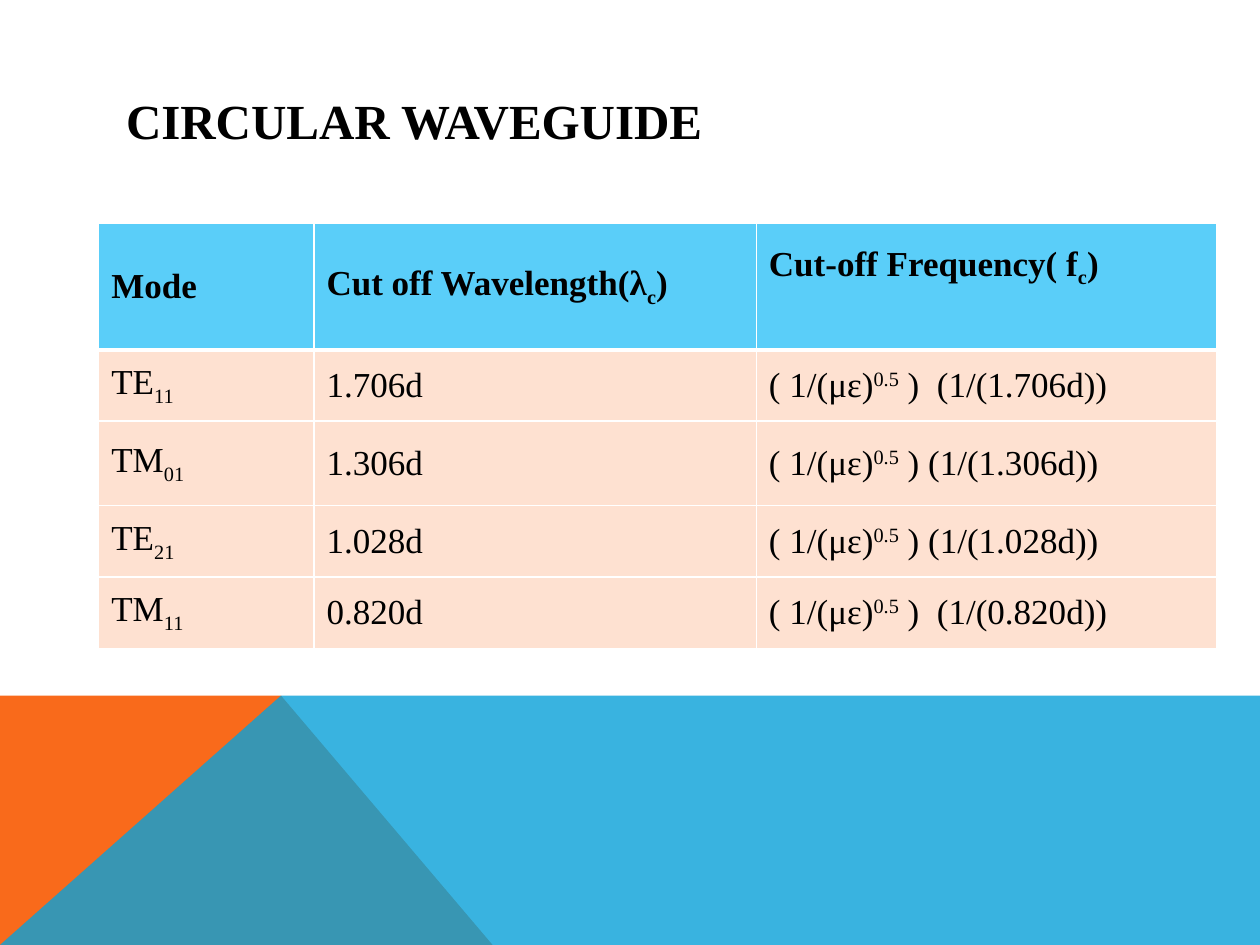
from lxml import etree
from pptx import Presentation
from pptx.dml.color import RGBColor
from pptx.enum.text import MSO_ANCHOR, PP_ALIGN
from pptx.oxml.ns import qn
from pptx.util import Pt

MIDDLE, LEFT = MSO_ANCHOR.MIDDLE, PP_ALIGN.LEFT
FONT = "Times New Roman"
TITLE_ONLY = 5
W, H = 720, 540
BAND_TOP, PEAK_X, FOOT_X = 397.5, 160.6, 281.5
SUB, SUP = -25, 30
COLORS = {"text": "000000", "orange": "F96A1B", "blue": "08A1D9",
          "head": "5ACEF9", "body": "FEE1D1", "border": "FFFFFF"}
COL_WIDTHS = (123, 252.8, 263.2)
ROW_HEIGHTS = (72.2, 40.8, 48.2, 40.8, 40.8)

HEADER = (["Mode"],
          ["Cut off Wavelength(λ", ("c", SUB), ")"],
          ["Cut-off Frequency( f", ("c", SUB), ")"])
# Mode letters, mode indices, wavelength, end of the frequency formula
MODES = (("TE", "11", "1.706d", " )  (1/(1.706d))"),
         ("TM", "01", "1.306d", " ) (1/(1.306d))"),
         ("TE", "21", "1.028d", " ) (1/(1.028d))"),
         ("TM", "11", "0.820d", " )  (1/(0.820d))"))


def rgb(name):
    return RGBColor.from_string(COLORS[name])


def style_font(font, size, bold):
    font.name = FONT
    font.size = Pt(size)
    font.bold = bold
    font.color.rgb = rgb("text")


def add_polygon(s, points, color, alpha=None):
    """Draw a filled outline; alpha is the opacity in percent."""
    pts = [(Pt(x), Pt(y)) for x, y in points]
    fb = s.shapes.build_freeform(*pts[0], scale=1)
    fb.add_line_segments(pts[1:], close=True)
    sp = fb.convert_to_shape()
    sp.shadow.inherit = False
    sp.line.fill.background()
    sp.fill.solid()
    sp.fill.fore_color.rgb = rgb(color)
    if alpha is not None:
        clr = sp.fill._xPr.find(".//" + qn("a:srgbClr"))
        etree.SubElement(clr, qn("a:alpha"), val=str(alpha * 1000))


def set_title(s, text):
    sp = s.shapes.title
    sp.left, sp.top, sp.width, sp.height = Pt(64.8), Pt(41), Pt(592), Pt(54.7)
    tf = sp.text_frame
    tf.text = text
    tf.vertical_anchor = MIDDLE
    p = tf.paragraphs[0]
    p.alignment = LEFT
    style_font(p.runs[0].font, 28, True)


def set_borders(cell, bottom):
    tcPr = cell._tc.get_or_add_tcPr()
    for side, width in (("L", 1), ("R", 1), ("T", 1), ("B", bottom)):
        ln = etree.SubElement(tcPr, qn("a:ln" + side), w=str(Pt(width)))
        fill = etree.SubElement(ln, qn("a:solidFill"))
        etree.SubElement(fill, qn("a:srgbClr"), val=COLORS["border"])


def fill_cell(cell, parts, header):
    """Write plain strings and (text, baseline) pairs as runs."""
    set_borders(cell, 3 if header else 1)
    cell.fill.solid()
    cell.fill.fore_color.rgb = rgb("head" if header else "body")
    cell.vertical_anchor = MIDDLE
    p = cell.text_frame.paragraphs[0]
    for part in parts:
        text, baseline = (part, 0) if isinstance(part, str) else part
        r = p.add_run()
        r.text = text
        style_font(r.font, 20, header)
        if baseline:
            r._r.get_or_add_rPr().set("baseline", str(baseline * 1000))


def add_mode_table(s):
    rows = [HEADER] + [
        ([kind, (index, SUB)], [wavelength], ["( 1/(με)", ("0.5", SUP), end])
        for kind, index, wavelength, end in MODES]
    table = s.shapes.add_table(len(rows), len(COL_WIDTHS), Pt(56.4), Pt(127.7),
                               Pt(sum(COL_WIDTHS)), Pt(sum(ROW_HEIGHTS))).table
    for col, width in zip(table.columns, COL_WIDTHS):
        col.width = Pt(width)
    for i, (row, height) in enumerate(zip(rows, ROW_HEIGHTS)):
        table.rows[i].height = Pt(height)
        for j, parts in enumerate(row):
            fill_cell(table.cell(i, j), parts, i == 0)
    # The frequency heading sits above the middle of its cell
    table.cell(0, 2).margin_bottom = Pt(26)


def main():
    prs = Presentation()
    prs.slide_width, prs.slide_height = Pt(W), Pt(H)
    s = prs.slides.add_slide(prs.slide_layouts[TITLE_ONLY])
    peak = (PEAK_X, BAND_TOP)
    add_polygon(s, [(0, H), (0, BAND_TOP), peak, (FOOT_X, H)], "orange")
    add_polygon(s, [(0, H), peak, (W, BAND_TOP), (W, H)], "blue", 80)
    set_title(s, "CIRCULAR WAVEGUIDE")
    add_mode_table(s)
    prs.save("out.pptx")


if __name__ == "__main__":
    main()
